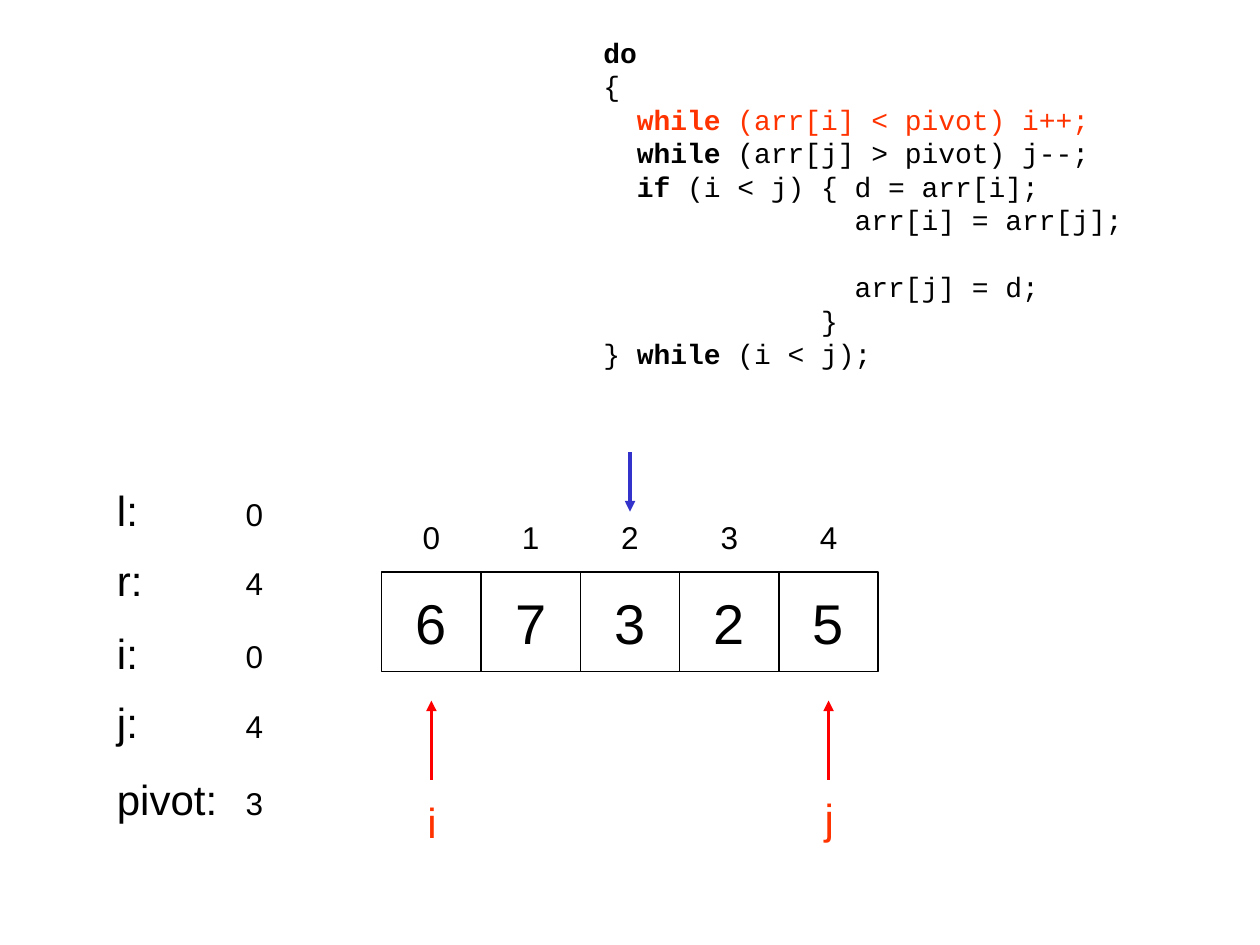
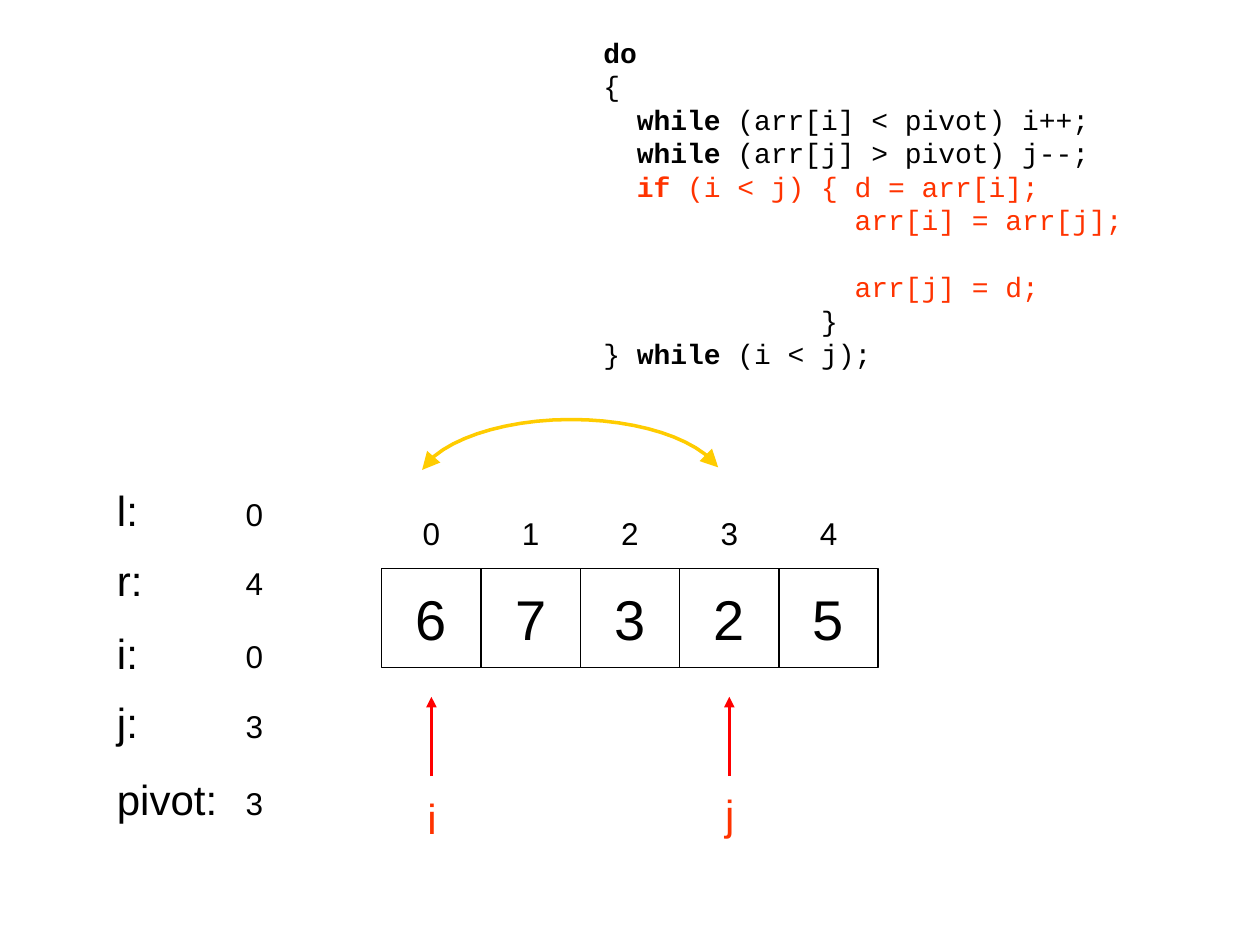
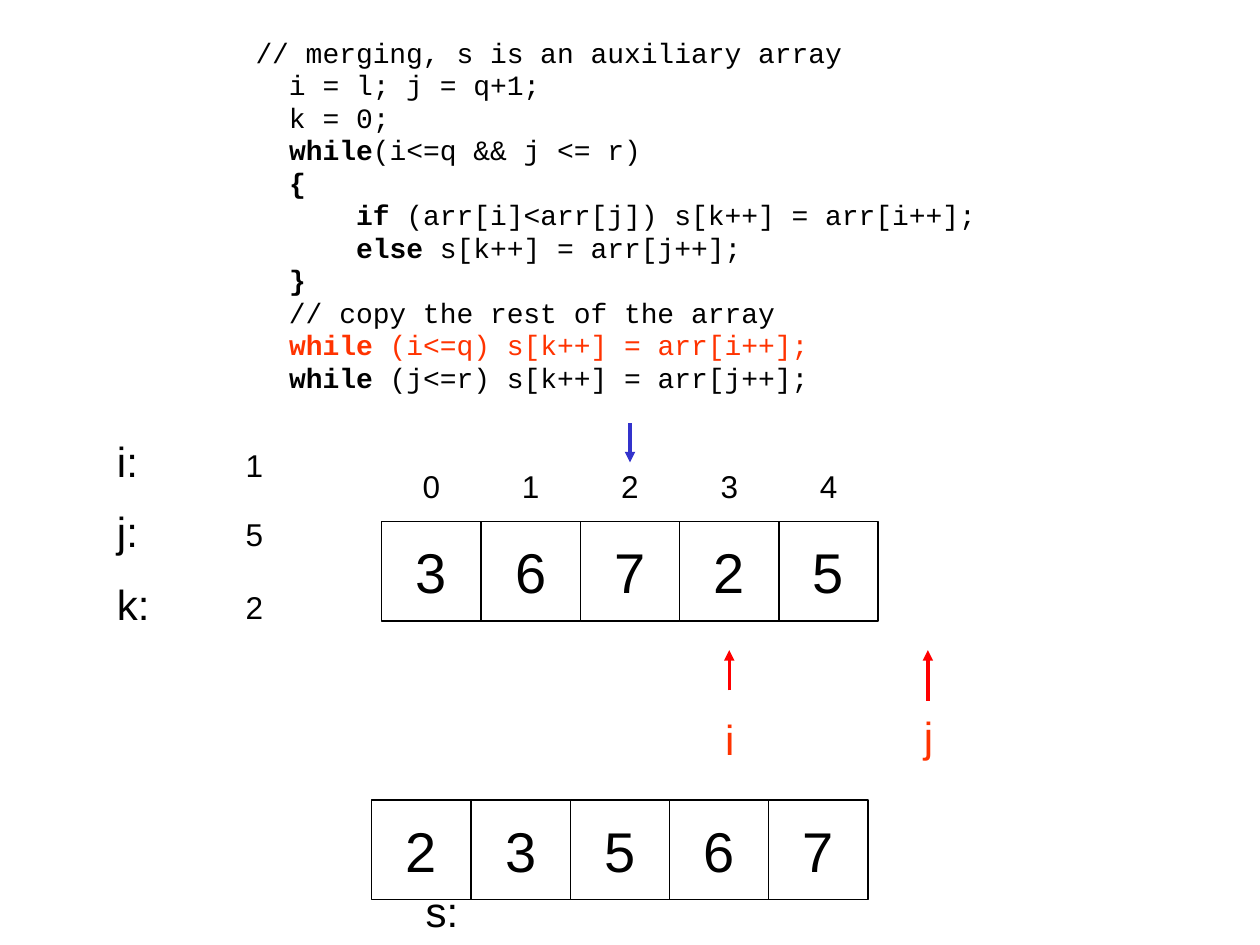
from pptx import Presentation
from pptx.dml.color import RGBColor
from pptx.enum.shapes import MSO_CONNECTOR, MSO_SHAPE
from pptx.enum.text import MSO_ANCHOR, PP_ALIGN
from pptx.oxml.ns import qn
from pptx.util import Inches, Pt
from lxml.etree import SubElement

BLACK = RGBColor(0x00, 0x00, 0x00)
HIGHLIGHT = RGBColor(0xFF, 0x33, 0x00)
RED = RGBColor(0xFF, 0x00, 0x00)
BLUE = RGBColor(0x33, 0x33, 0xCC)
YELLOW = RGBColor(0xFF, 0xCC, 0x00)

ARRAY_LEFT = 3.03
CELL = 3.94 / 5
MIDDLE = 2
CODE_PITCH = 19.17

# Asterisks enclose the keywords that are set in bold.
PARTITION_CODE = """*do*
{
  *while* (arr[i] < pivot) i++;
  *while* (arr[j] > pivot) j--;
  *if* (i < j) { d = arr[i];
               arr[i] = arr[j];
               arr[j] = d;
             }
} *while* (i < j);"""

MERGE_CODE = """// merging, s is an auxiliary array
  i = l; j = q+1;
  k = 0;
  *while*(i<=q && j <= r)
  *{*
      *if* (arr[i]<arr[j]) s[k++] = arr[i++];
      *else* s[k++] = arr[j++];
  *}*
  // copy the rest of the array
  *while* (i<=q) s[k++] = arr[i++];
  *while* (j<=r) s[k++] = arr[j++];"""

PARTITION_LAYOUT = {
    "code": PARTITION_CODE, "code_box": (4.69, 0.23, 5, 2.51),
    "pitch": CODE_PITCH, "gap_after": 5,
    "variable_tops": (3.8, 4.35, 4.93, 5.48, 6.09),
}

# Pointers give name, cell index, arrow start and label top below the array's top.
STEPS = [
    PARTITION_LAYOUT | {
        "highlighted": {2}, "array": "67325", "array_top": 4.54,
        "variables": {"l:": "0", "r:": "4", "i:": "0", "j:": "4", "pivot:": "3"},
        "pointers": [("i", 0, 1.65, 1.73), ("j", 4, 1.65, 1.7)],
        "middle_arrow": (3.59, 4.06), "swap": False, "sorted": "",
    },
    PARTITION_LAYOUT | {
        "highlighted": {4, 5, 6}, "array": "67325", "array_top": 4.51,
        "variables": {"l:": "0", "r:": "4", "i:": "0", "j:": "3", "pivot:": "3"},
        "pointers": [("i", 0, 1.65, 1.73), ("j", 3, 1.65, 1.7)],
        "middle_arrow": None, "swap": True, "sorted": "",
    },
    {
        "code": MERGE_CODE, "code_box": (1.93, 0.24, 7.76, 3.01),
        "pitch": 18.57, "gap_after": None,
        "highlighted": {9}, "array": "36725", "array_top": 4.14,
        "variables": {"i:": "1", "j:": "5", "k:": "2"},
        "variable_tops": (3.41, 3.96, 4.54),
        "pointers": [("i", 3, 1.34, 1.47), ("j", 5, 1.42, 1.45)],
        "middle_arrow": (3.36, 3.67), "swap": False, "sorted": "23567",
    },
]


def add_text(page, text, left, top, width, height, size=24, color=BLACK, font="Arial",
             align=PP_ALIGN.LEFT, framed=False, pitch=None, highlighted=()):
    """Add a text box, or a framed cell; lines listed in highlighted turn red."""
    area = [Inches(length) for length in (left, top, width, height)]
    if framed:
        box = page.shapes.add_shape(MSO_SHAPE.RECTANGLE, *area)
        box.shadow.inherit = False
        box.fill.background()
        box.line.color.rgb = BLACK
        box.line.width = Pt(0.75)
        box.text_frame.vertical_anchor = MSO_ANCHOR.MIDDLE
    else:
        box = page.shapes.add_textbox(*area)
    frame = box.text_frame
    frame.word_wrap = not framed
    for number, line in enumerate(text.split("\n")):
        para = frame.add_paragraph() if number else frame.paragraphs[0]
        para.alignment = align
        if pitch:
            para.line_spacing = Pt(pitch)
        for position, piece in enumerate(line.split("*")):
            if piece:
                span = para.add_run()
                span.text = piece
                span.font.name = font
                span.font.size = Pt(size)
                span.font.bold = position % 2 == 1
                span.font.color.rgb = HIGHLIGHT if number in highlighted else color
    return box


def style_arrow(arrow, color, ends, size):
    arrow.line.color.rgb = color
    arrow.line.width = Pt(2)
    outline = arrow.line._get_or_add_ln()
    for end in ends:
        SubElement(outline, qn(f"a:{end}"), type="triangle", w=size, len=size)
    SubElement(arrow._element.spPr, qn("a:effectLst"))


deck = Presentation()
deck.slide_width = Inches(10)
deck.slide_height = Inches(7.5)

for step in STEPS:
    page = deck.slides.add_slide(deck.slide_layouts[6])
    array_top = step["array_top"]

    for index, value in enumerate(step["array"]):
        left = ARRAY_LEFT + index * CELL
        add_text(page, value, left, array_top, CELL, CELL, size=32,
                 align=PP_ALIGN.CENTER, framed=True)
        add_text(page, str(index), left, array_top - 0.48, CELL, 0.39, size=18,
                 align=PP_ALIGN.CENTER)

    arrows = [(index, array_top + start, array_top + 1.02, RED)
              for name, index, start, label in step["pointers"]]
    if step["middle_arrow"]:
        arrows.append((MIDDLE, *step["middle_arrow"], BLUE))
    for index, start, tip, color in arrows:
        center = Inches(ARRAY_LEFT + (index + 0.5) * CELL)
        arrow = page.shapes.add_connector(MSO_CONNECTOR.STRAIGHT, center, Inches(start),
                                          center, Inches(tip))
        style_arrow(arrow, color, ["tailEnd"], "med")

    for name, index, start, label in step["pointers"]:
        left = ARRAY_LEFT + (index + 0.5) * CELL - 0.23
        add_text(page, name, left, array_top + label, 0.47, 0.5, color=HIGHLIGHT,
                 align=PP_ALIGN.CENTER)

    for (name, value), top in zip(step["variables"].items(), step["variable_tops"]):
        add_text(page, name, 0.83, top, 1.1, 0.5)
        add_text(page, value, 1.85, top + 0.08, 0.39, 0.4, size=18)

    code = add_text(page, step["code"], *step["code_box"], size=16, font="Courier New",
                    pitch=step["pitch"], highlighted=step["highlighted"])
    if step["gap_after"]:
        code.text_frame.paragraphs[step["gap_after"]].space_after = Pt(CODE_PITCH)

    if step["swap"]:
        halves = [((3.35, 3.73), (3.49, 3.5), (3.98, 3.33), (4.53, 3.33)),
                  ((4.53, 3.33), (5.06, 3.33), (5.53, 3.48), (5.7, 3.71))]
        points = []
        for half in halves:
            for count in range(13):
                t = count / 12
                weights = ((1 - t) ** 3, 3 * t * (1 - t) ** 2, 3 * t ** 2 * (1 - t), t ** 3)
                points.append([Inches(sum(weight * point[axis]
                                          for weight, point in zip(weights, half)))
                               for axis in (0, 1)])
        builder = page.shapes.build_freeform(*points[0])
        builder.add_line_segments(points[1:], close=False)
        swap_curve = builder.convert_to_shape()
        swap_curve.fill.background()
        style_arrow(swap_curve, YELLOW, ["headEnd", "tailEnd"], "lg")

    for index, value in enumerate(step["sorted"]):
        add_text(page, value, 2.95 + index * CELL, 6.35, CELL, CELL, size=32,
                 align=PP_ALIGN.CENTER, framed=True)
    if step["sorted"]:
        add_text(page, "s:", 3.28, 6.98, 1.1, 0.5)

deck.save("out.pptx")
